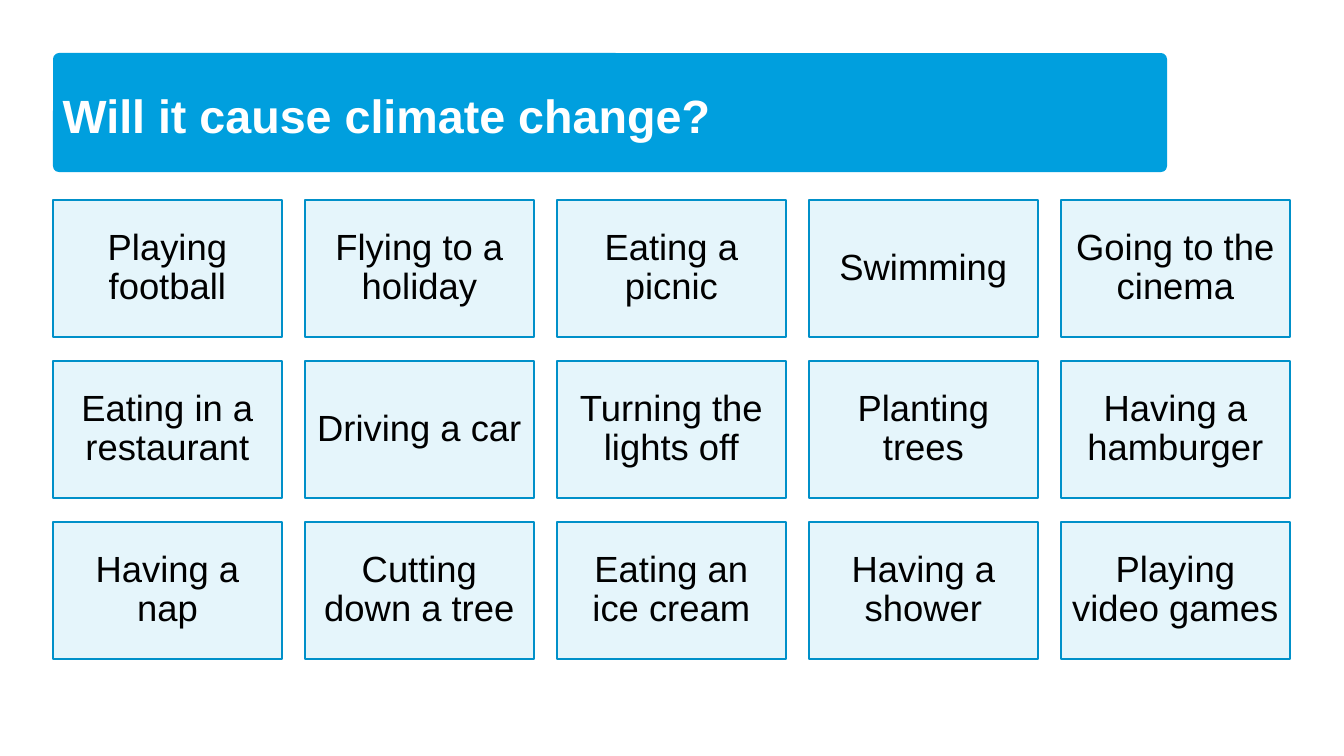
from pptx import Presentation
from pptx.dml.color import RGBColor as RGB
from pptx.enum.shapes import MSO_SHAPE as Kind
from pptx.enum.text import MSO_ANCHOR as Anchor, PP_ALIGN as Align
from pptx.oxml.ns import qn
from pptx.util import Pt
from lxml.etree import SubElement as Sub

TITLE = "Will it cause climate change?"
CARDS = [
    ["Playing football", "Flying to a holiday", "Eating a picnic",
     "Swimming", "Going to the cinema"],
    ["Eating in a restaurant", "Driving a car", "Turning the lights off",
     "Planting trees", "Having a hamburger"],
    ["Having a nap", "Cutting down a tree", "Eating an ice cream",
     "Having a shower", "Playing video games"],
]

BLUE = RGB(0x00, 0x9F, 0xDE)
EDGE = RGB(0x00, 0x90, 0xC9)
WHITE = RGB(0xFF, 0xFF, 0xFF)
BLACK = RGB(0x00, 0x00, 0x00)

SCALE = 914400 / 100.8
WIDE, HIGH = 1344, 756
LEFT, TOP = 53, 200
CARD_W, CARD_H = 229, 137
STEP_X, STEP_Y = 252, 161


def px(n):
    return round(n * SCALE)


def add_box(slide, kind, x, y, w, h):
    box = slide.shapes.add_shape(kind, px(x), px(y), px(w), px(h))
    box.shadow.inherit = False
    box.fill.solid()
    box.fill.fore_color.rgb = BLUE
    return box


def write(box, text, size, color, pad, align, space, bold=False):
    frame = box.text_frame
    frame.word_wrap = True
    frame.vertical_anchor = Anchor.MIDDLE
    frame.margin_left = frame.margin_right = px(pad)
    frame.margin_top = frame.margin_bottom = px(pad)
    para = frame.paragraphs[0]
    para.alignment = align
    para.line_spacing = space
    run = para.add_run()
    run.text = text
    font = run.font
    font.name, font.size, font.bold = "Arial", Pt(size), bold
    font.color.rgb = color


def add_title(slide):
    bar = add_box(slide, Kind.ROUNDED_RECTANGLE, LEFT, 53, 1114, 119)
    bar.adjustments[0] = 0.05
    bar.line.fill.background()
    write(bar, TITLE, 33.3, WHITE, 8, Align.LEFT, 1.1, bold=True)


def add_card(slide, row, col, text):
    card = add_box(slide, Kind.RECTANGLE, LEFT + col * STEP_X,
                   TOP + row * STEP_Y, CARD_W, CARD_H)
    tint = card.fill._xPr.find(qn("a:solidFill"))[0]
    Sub(tint, qn("a:alpha"), val="10000")
    card.line.color.rgb = EDGE
    card.line.width = Pt(1)
    write(card, text, 26, BLACK, 11, Align.CENTER, 0.9)


def main():
    deck = Presentation()
    deck.slide_width, deck.slide_height = px(WIDE), px(HIGH)
    slide = deck.slides.add_slide(deck.slide_layouts[6])
    add_title(slide)
    for row, texts in enumerate(CARDS):
        for col, text in enumerate(texts):
            add_card(slide, row, col, text)
    deck.save("out.pptx")


if __name__ == "__main__":
    main()
